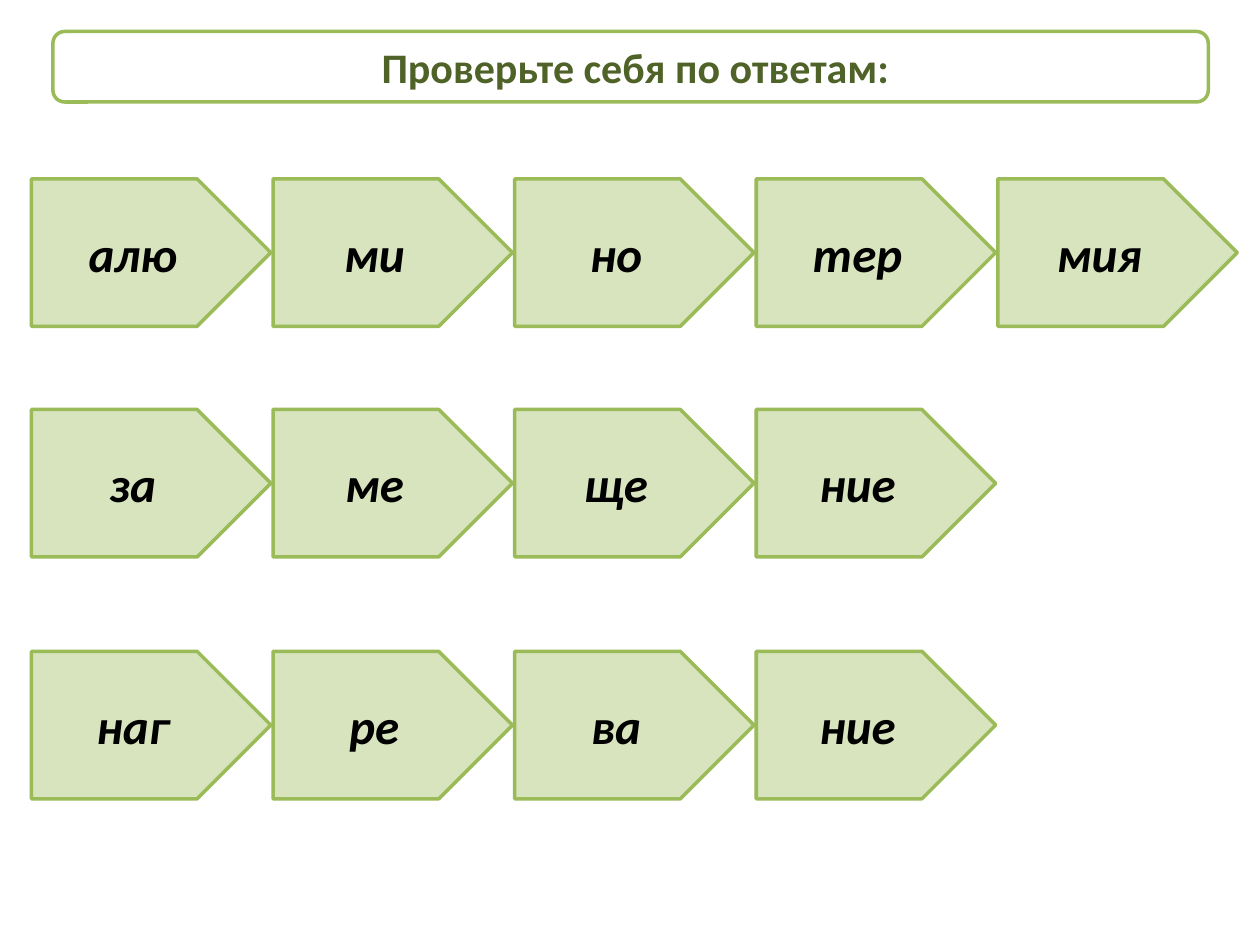
from pptx import Presentation
from pptx.dml.color import RGBColor
from pptx.enum.shapes import MSO_SHAPE
from pptx.enum.text import MSO_ANCHOR, PP_ALIGN
from pptx.util import Inches, Pt

WHITE = RGBColor(0xFF, 0xFF, 0xFF)
BLACK = RGBColor(0x00, 0x00, 0x00)
PALE_GREEN = RGBColor(0xD7, 0xE4, 0xBD)
GREEN = RGBColor(0x9B, 0xBB, 0x59)
DARK_GREEN = RGBColor(0x4F, 0x62, 0x28)

ANSWERS = [
    (1.42, ["алю", "ми", "но", "тер", "мия"]),
    (3.25, ["за", "ме", "ще", "ние"]),
    (5.17, ["наг", "ре", "ва", "ние"]),
]
FIRST_LEFT = 0.25
LAST_LEFT = 7.92
SYLLABLE_STEP = (LAST_LEFT - FIRST_LEFT) / 4


def add_label(slide, kind, box, text, fill, color, size, italic=False):
    """Add a green-outlined shape with bold centred text and return it."""
    label = slide.shapes.add_shape(kind, *(Inches(length) for length in box))
    label.shadow.inherit = False
    label.fill.solid()
    label.fill.fore_color.rgb = fill
    label.line.color.rgb = GREEN
    label.line.width = Pt(2)
    frame = label.text_frame
    frame.word_wrap = True
    frame.vertical_anchor = MSO_ANCHOR.MIDDLE
    frame.text = text
    paragraph = frame.paragraphs[0]
    paragraph.alignment = PP_ALIGN.CENTER
    font = paragraph.runs[0].font
    font.name = "Calibri"
    font.size = Pt(size)
    font.bold = True
    font.italic = italic
    font.color.rgb = color
    return label


def add_heading(slide, text):
    """Add the rounded heading bar."""
    add_label(slide, MSO_SHAPE.ROUNDED_RECTANGLE, (0.42, 0.25, 9.17, 0.56),
              text, WHITE, DARK_GREEN, 24)


def add_word(slide, top, syllables):
    """Add one word as a row of arrow-shaped syllables."""
    for index, syllable in enumerate(syllables):
        left = FIRST_LEFT + index * SYLLABLE_STEP
        add_label(slide, MSO_SHAPE.PENTAGON, (left, top, 1.9, 1.17),
                  syllable, PALE_GREEN, BLACK, 28, italic=True)


def main():
    """Build the answer slide and save it."""
    presentation = Presentation()
    presentation.slide_width = Inches(10)
    presentation.slide_height = Inches(7.5)
    slide = presentation.slides.add_slide(presentation.slide_layouts[6])
    for top, syllables in ANSWERS:
        add_word(slide, top, syllables)
    add_heading(slide, " Проверьте себя по ответам:")
    presentation.save("out.pptx")


if __name__ == "__main__":
    main()
